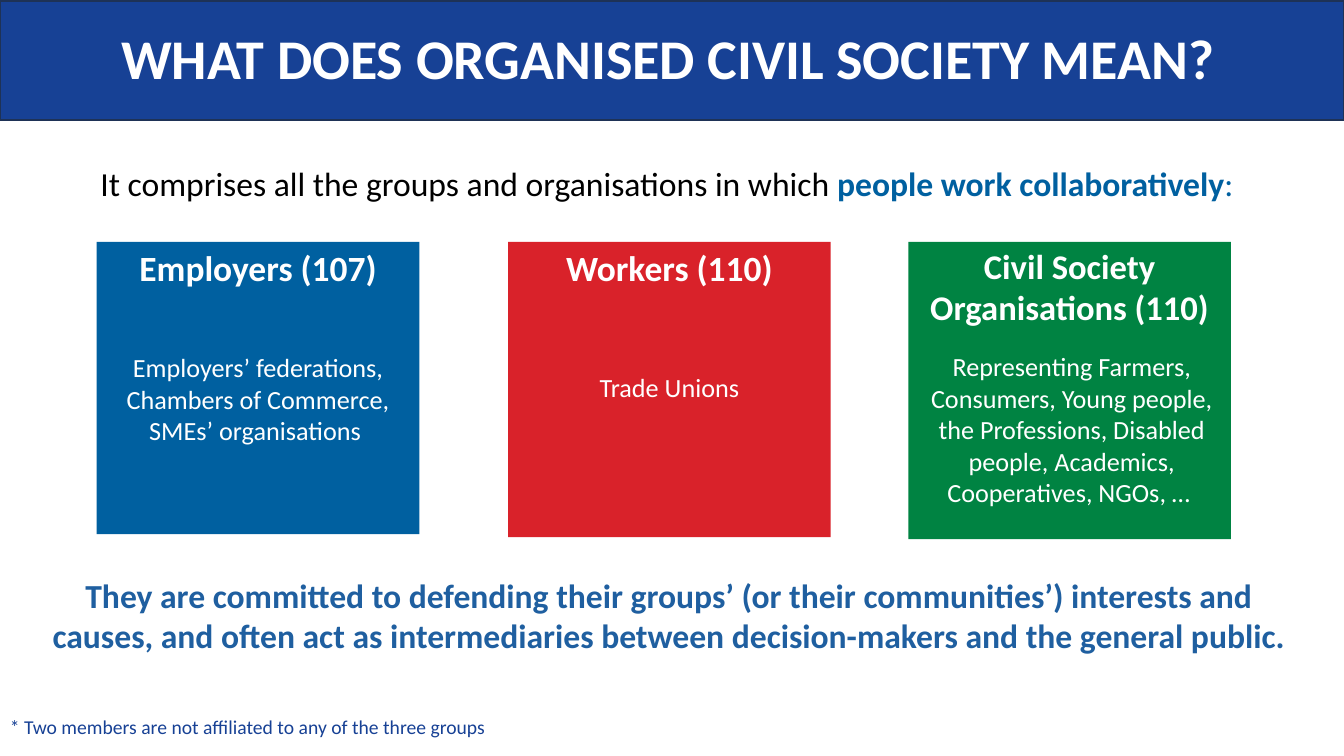
from pptx import Presentation
from pptx.dml.color import RGBColor
from pptx.enum.shapes import MSO_SHAPE
from pptx.enum.text import PP_ALIGN
from pptx.util import Inches, Pt

NAVY, BLUE, RED, GREEN, WHITE = "174195", "0060A0", "D9222A", "008342", "FFFFFF"


def add_text(text, x, y, w, h, size, color=WHITE, bold=False, align=PP_ALIGN.CENTER):
    """Add a text box with one paragraph per line of text and return its last paragraph."""
    tf = s.shapes.add_textbox(Inches(x), Inches(y), Inches(w), Inches(h)).text_frame
    tf.word_wrap = True
    tf.text = text
    for p in tf.paragraphs:
        p.alignment = align
        font = p.runs[0].font
        font.name, font.size, font.bold = "Calibri", Pt(size), bold
        font.color.rgb = RGBColor.from_string(color)
    return p


def add_rect(x, y, w, h, fill, line=None):
    sp = s.shapes.add_shape(MSO_SHAPE.RECTANGLE, Inches(x), Inches(y), Inches(w), Inches(h))
    sp.shadow.inherit = False
    sp.fill.solid()
    sp.fill.fore_color.rgb = RGBColor.from_string(fill)
    if line:
        sp.line.color.rgb = RGBColor.from_string(line)
        sp.line.width = Pt(1)
    else:
        sp.line.fill.background()


prs = Presentation()
prs.slide_width, prs.slide_height = Inches(13.33), Inches(7.5)
s = prs.slides.add_slide(prs.slide_layouts[6])

# Title banner
add_rect(0, 0.01, 13.33, 1.18, NAVY, line="1E3256")
add_text("WHAT DOES ORGANISED CIVIL SOCIETY MEAN?", -0.09, 0.18, 13.43, 1.17, 40, bold=True)

# Introduction, with its ending highlighted
p = add_text("It comprises all the groups and organisations in which ",
             -0.05, 1.61, 13.33, 0.57, 24, "000000")
p.line_spacing = 0.9
for text, bold in (("people work collaboratively", True), (":", False)):
    r = p.add_run()
    r.text = text
    r.font.name, r.font.size, r.font.bold = "Calibri", Pt(24), bold
    r.font.color.rgb = RGBColor.from_string(BLUE)

# Three groups: left, box height, fill, heading, heading top, height and size, members, members top and height
groups = [
    (0.96, 2.9, BLUE, "Employers (107)", 2.39, 0.54, 25.3,
     "Employers’ federations,\nChambers of Commerce,\nSMEs’ organisations ", 3.44, 1.36),
    (5.04, 2.93, RED, "Workers (110)", 2.39, 0.54, 25.3,
     "Trade Unions", 3.63, 0.42),
    (9.01, 2.95, GREEN, "Civil Society Organisations (110)", 2.38, 0.86, 24.7,
     "Representing Farmers, Consumers, Young people, the Professions, Disabled people, "
     "Academics, Cooperatives, NGOs, … ", 3.43, 1.99),
]
for x, h, fill, heading, head_y, head_h, head_size, members, members_y, members_h in groups:
    add_rect(x, 2.4, 3.2, h, fill)
    add_text(heading, x, head_y, 3.2, head_h, head_size, bold=True)
    add_text(members, x, members_y, 3.24 if fill == GREEN else 3.2, members_h, 18.7)

# Conclusion and footnote
add_text("They are committed to defending their groups’ (or their communities’) interests and causes, "
         "and often act as intermediaries between decision-makers and the general public.",
         0.38, 5.65, 12.51, 1.55, 24, "1F5FA0", bold=True)
add_text("* Two members are not affiliated to any of the three groups",
         0, 7.04, 9.34, 0.34, 14, NAVY, align=PP_ALIGN.LEFT)

prs.save("out.pptx")
